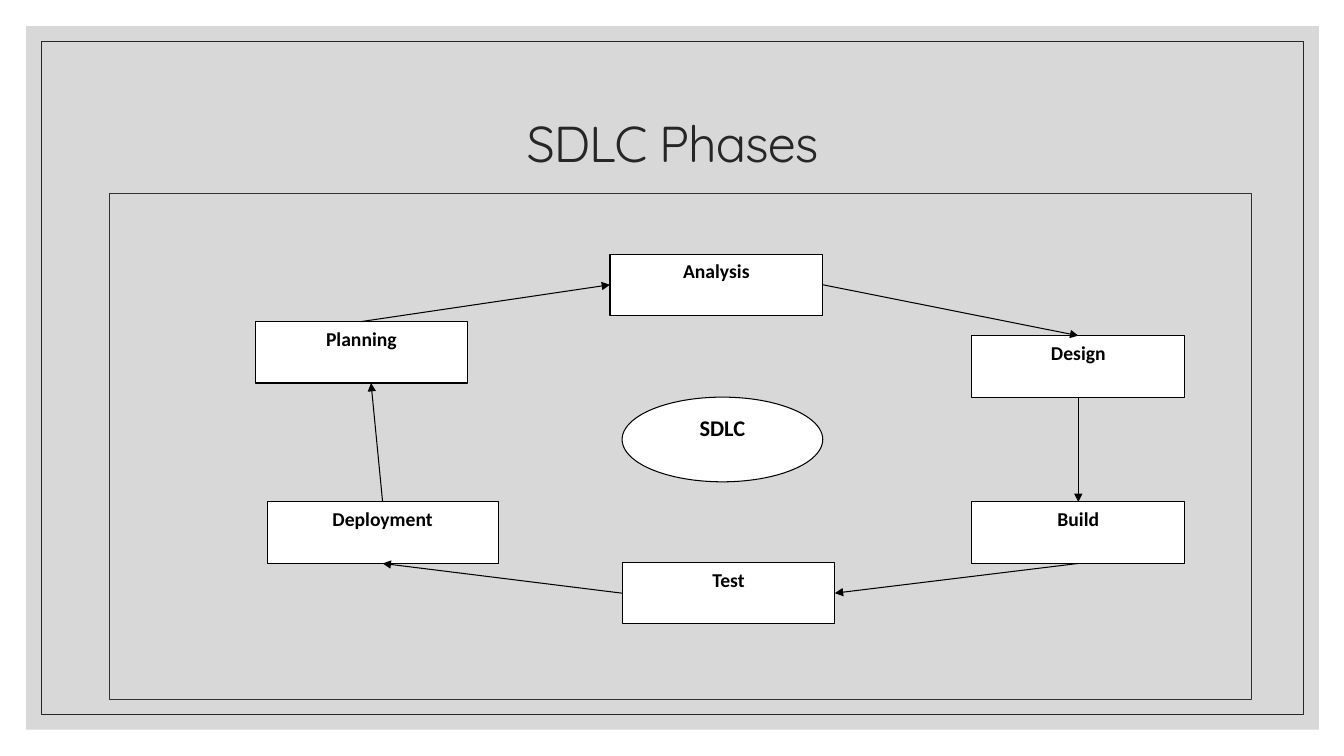
"""Builds the SDLC phases cycle slide."""
from lxml import etree
from pptx import Presentation
from pptx.dml.color import RGBColor
from pptx.enum.shapes import MSO_CONNECTOR, MSO_SHAPE
from pptx.enum.text import MSO_ANCHOR, PP_ALIGN
from pptx.oxml.ns import qn
from pptx.util import Inches, Pt

RECTANGLE, OVAL = MSO_SHAPE.RECTANGLE, MSO_SHAPE.OVAL
STRAIGHT = MSO_CONNECTOR.STRAIGHT
CENTER, TOP, MIDDLE = PP_ALIGN.CENTER, MSO_ANCHOR.TOP, MSO_ANCHOR.MIDDLE
TOP_SITE, LEFT_SITE, BOTTOM_SITE, RIGHT_SITE = range(4)

TITLE = "SDLC Phases"
BOX_WIDTH, BOX_HEIGHT = 2.11, 0.61
PHASES = {
    "Planning": (2.53, 3.19, BOX_WIDTH),
    "Analysis": (6.05, 2.52, BOX_WIDTH),
    "Design": (9.64, 3.33, BOX_WIDTH),
    "Build": (9.64, 4.98, BOX_WIDTH),
    "Test": (6.17, 5.58, BOX_WIDTH),
    "Deployment": (2.65, 4.98, 2.29),
}
ARROWS = [
    ("Planning", TOP_SITE, "Analysis", LEFT_SITE),
    ("Analysis", RIGHT_SITE, "Design", TOP_SITE),
    ("Design", BOTTOM_SITE, "Build", TOP_SITE),
    ("Build", BOTTOM_SITE, "Test", RIGHT_SITE),
    ("Test", LEFT_SITE, "Deployment", BOTTOM_SITE),
]
RETURN_ARROW_END = (3.68, 3.8)


def color(hex_string):
    return RGBColor.from_string(hex_string)


def add_box(slide, kind, bounds, fill=None, line=None, width=0.75):
    shape = slide.shapes.add_shape(kind, *map(Inches, bounds))
    shape.shadow.inherit = False
    if fill:
        shape.fill.solid()
        shape.fill.fore_color.rgb = color(fill)
    else:
        shape.fill.background()
    if line:
        shape.line.color.rgb = color(line)
        shape.line.width = Pt(width)
    else:
        shape.line.fill.background()
    return shape


def add_label(slide, kind, bounds, text, size):
    shape = add_box(slide, kind, bounds, "FFFFFF", "000000")
    shape.text_frame.text = text
    shape.text_frame.vertical_anchor = TOP
    paragraph = shape.text_frame.paragraphs[0]
    paragraph.alignment = CENTER
    font = paragraph.font
    font.name, font.size, font.bold = "Calibri", Pt(size), True
    font.color.rgb = color("000000")
    return shape


def add_arrow(slide, start, start_site, end=None, end_site=None, end_point=(0, 0)):
    x, y = map(Inches, end_point)
    arrow = slide.shapes.add_connector(STRAIGHT, 0, 0, x, y)
    arrow.begin_connect(start, start_site)
    if end is not None:
        arrow.end_connect(end, end_site)
    arrow.line.color.rgb = color("000000")
    arrow.line.width = Pt(0.75)
    etree.SubElement(arrow.line._get_or_add_ln(), qn("a:tailEnd"), type="triangle")
    etree.SubElement(arrow._element.spPr, qn("a:effectLst"))


def add_title(slide):
    title = slide.shapes.title
    title.left, title.top, title.width, title.height = map(Inches, (1.17, 0.7, 11, 1.5))
    title.text_frame.text = TITLE
    title.text_frame.vertical_anchor = MIDDLE
    paragraph = title.text_frame.paragraphs[0]
    paragraph.alignment = CENTER
    paragraph.line_spacing = 0.9
    paragraph.font.name, paragraph.font.size = "Quicksand", Pt(36)
    paragraph.font.color.rgb = color("262626")
    paragraph.runs[0].font._element.set("spc", "-70")
    return title


def add_background(slide, title):
    panel = add_box(slide, RECTANGLE, (0.26, 0.26, 12.82, 6.98), "BFBFBF")
    panel_color = panel._element.spPr.find(qn("a:solidFill"))[0]
    etree.SubElement(panel_color, qn("a:alpha"), val="60000")
    border = add_box(slide, RECTANGLE, (0.41, 0.41, 12.52, 6.68), line="262626", width=0.5)
    for shape in (panel, border):
        title._element.addprevious(shape._element)


def main():
    presentation = Presentation()
    presentation.slide_width, presentation.slide_height = Inches(13.33), Inches(7.5)
    slide = presentation.slides.add_slide(presentation.slide_layouts[5])
    add_background(slide, add_title(slide))
    add_box(slide, RECTANGLE, (1.09, 1.92, 11.32, 5.02), line="17365D")
    boxes = {
        name: add_label(slide, RECTANGLE, (left, top, width, BOX_HEIGHT), name, 14)
        for name, (left, top, width) in PHASES.items()
    }
    add_label(slide, OVAL, (6.17, 3.94, 1.99, 0.84), "SDLC", 16)
    for start, start_site, end, end_site in ARROWS:
        add_arrow(slide, boxes[start], start_site, boxes[end], end_site)
    add_arrow(slide, boxes["Deployment"], TOP_SITE, end_point=RETURN_ARROW_END)
    presentation.save("out.pptx")


if __name__ == "__main__":
    main()
